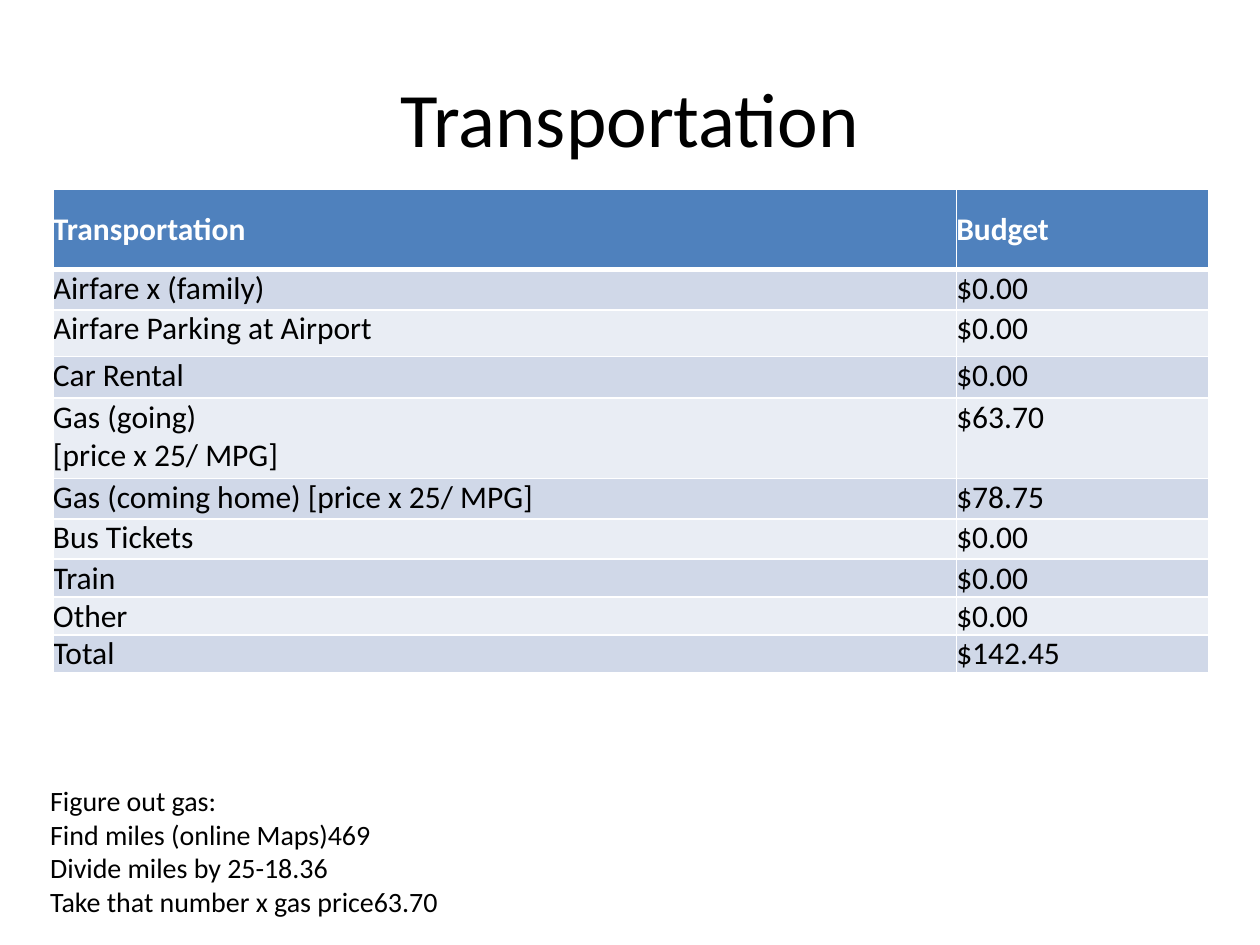
from lxml import etree
from pptx import Presentation
from pptx.dml.color import RGBColor
from pptx.enum.text import MSO_ANCHOR, MSO_AUTO_SIZE, PP_ALIGN
from pptx.oxml.ns import qn
from pptx.util import Inches, Pt

MIDDLE, TOP = MSO_ANCHOR.MIDDLE, MSO_ANCHOR.TOP
CENTER, LEFT = PP_ALIGN.CENTER, PP_ALIGN.LEFT
FIT_SHAPE = MSO_AUTO_SIZE.SHAPE_TO_FIT_TEXT
FONT = "Calibri"
COLORS = {
    "text": "000000",
    "white": "FFFFFF",
    "header": "4F81BD",
    "band_dark": "D0D8E8",
    "band_light": "E9EDF4",
}

presentation = Presentation()
presentation.slide_width = Inches(10)
presentation.slide_height = Inches(7.5)
slide = presentation.slides.add_slide(presentation.slide_layouts[6])

# The slide is a grid of 10 columns and 7.5 rows of equal units
unit = presentation.slide_width // 10


def write_lines(text_frame, lines, size, color="text", bold=False, align=LEFT):
    for index, line in enumerate(lines):
        paragraph = text_frame.paragraphs[0] if index == 0 else text_frame.add_paragraph()
        paragraph.alignment = align
        run = paragraph.add_run()
        run.text = line
        run.font.name = FONT
        run.font.size = Pt(size)
        run.font.bold = bold
        run.font.color.rgb = RGBColor.from_string(COLORS[color])


def add_border(cell, side, width):
    line = etree.SubElement(cell._tc.get_or_add_tcPr(), qn(f"a:ln{side}"), w=str(Pt(width)))
    fill = etree.SubElement(line, qn("a:solidFill"))
    etree.SubElement(fill, qn("a:srgbClr"), val=COLORS["white"])


# Title
title = slide.shapes.add_textbox(*(int(unit * n) for n in (0.5, 0.3, 9, 1.25)))
title.text_frame.word_wrap = True
title.text_frame.vertical_anchor = MIDDLE
write_lines(title.text_frame, ["Transportation"], 44, align=CENTER)

# Budget table: row height, item lines, amount
budget_rows = [
    (0.64, ["Transportation"], "Budget"),
    (0.32, ["Airfare x (family)"], "$0.00"),
    (0.37, ["Airfare Parking at Airport"], "$0.00"),
    (0.33, ["Car Rental"], "$0.00"),
    (0.64, ["Gas (going)", "[price x 25/ MPG]"], "$63.70"),
    (0.32, ["Gas (coming home) [price x 25/ MPG]"], "$78.75"),
    (0.32, ["Bus Tickets"], "$0.00"),
    (0.22, ["Train"], "$0.00"),
    (0.22, ["Other"], "$0.00"),
    (0.22, ["Total"], "$142.45"),
]
column_widths = (7.17, 2)
table_height = sum(row[0] for row in budget_rows)
table = slide.shapes.add_table(
    len(budget_rows), len(column_widths),
    *(int(unit * n) for n in (0.42, 1.5, sum(column_widths), table_height)),
).table
table.first_row = False
table.horz_banding = False
for column, width in zip(table.columns, column_widths):
    column.width = int(unit * width)

for row_index, (height, item, amount) in enumerate(budget_rows):
    table.rows[row_index].height = int(unit * height)
    is_header = row_index == 0
    band = "band_dark" if row_index % 2 else "band_light"
    for column_index, lines in enumerate((item, [amount])):
        cell = table.cell(row_index, column_index)
        cell.margin_left = cell.margin_right = cell.margin_top = cell.margin_bottom = 0
        cell.vertical_anchor = MIDDLE if is_header else TOP
        # A thick rule divides the header from the body
        for side in "LRTB":
            thick = (row_index, side) in ((0, "B"), (1, "T"))
            add_border(cell, side, 3 if thick else 1)
        cell.fill.solid()
        cell.fill.fore_color.rgb = RGBColor.from_string(COLORS["header" if is_header else band])
        write_lines(cell.text_frame, lines, 18, "white" if is_header else "text", is_header)

# Gas calculation note
note = slide.shapes.add_textbox(*(int(unit * n) for n in (0.3, 6.17, 3.31, 1.18)))
note.text_frame.word_wrap = False
note.text_frame.auto_size = FIT_SHAPE
note_lines = [
    "Figure out gas:",
    "Find miles (online Maps)469",
    "Divide miles by 25-18.36",
    "Take that number x gas price63.70",
]
write_lines(note.text_frame, note_lines, 16)

presentation.save("out.pptx")
